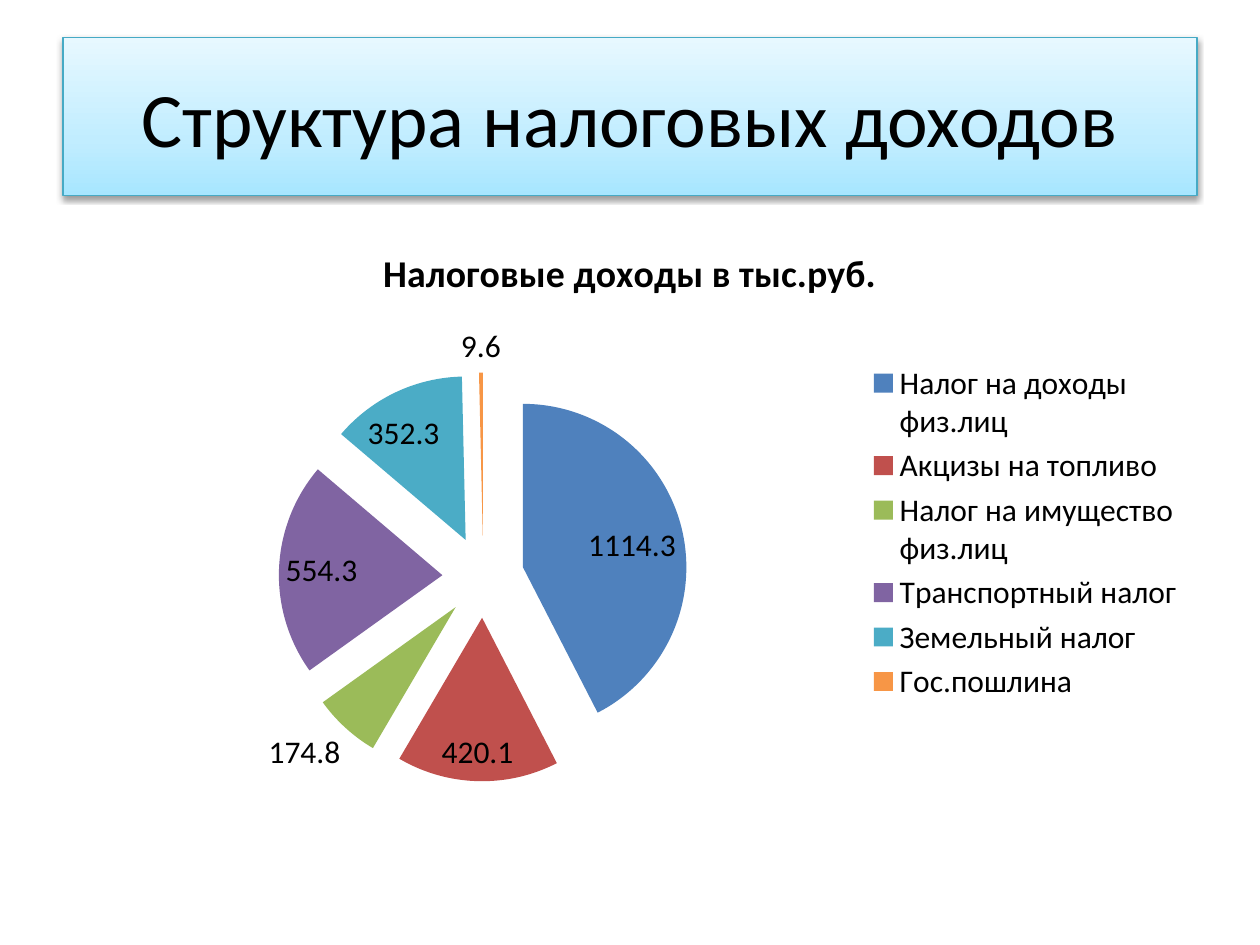
from copy import deepcopy
from typing import NamedTuple

from lxml import etree
from pptx import Presentation
from pptx.chart.data import CategoryChartData
from pptx.dml.color import RGBColor
from pptx.enum import chart as kinds, text
from pptx.oxml import parse_xml
from pptx.oxml.ns import nsdecls, qn
from pptx import util as u

BLACK = RGBColor(0x00, 0x00, 0x00)
EDGE = RGBColor(0x46, 0xAA, 0xC5)
STOPS = [
    (0, RGBColor(0xA7, 0xE6, 0xFF)),
    (0.35, RGBColor(0xC1, 0xED, 0xFF)),
    (1, RGBColor(0xE7, 0xF8, 0xFF)),
]
FACE = "Calibri"
WIDE, HIGH = u.Inches(10), u.Inches(7.5)


class Box(NamedTuple):
    """Place and size as shares of the slide."""
    left: float
    top: float
    width: float
    height: float

    def emu(self) -> list[int]:
        return [int(share * side) for share, side in zip(self, (WIDE, HIGH) * 2)]


class Tax(NamedTuple):
    name: str
    sum: float
    tint: RGBColor


TITLE = Box(0.05, 0.04, 0.9, 1 / 6)
CHART = Box(0.05, 1.75 / 7.5, 0.9, 0.66)
HEAD = "Налоговые доходы в тыс.руб."
TAXES = [
    Tax("Налог на доходы физ.лиц", 1114.3, RGBColor(0x4F, 0x81, 0xBD)),
    Tax("Акцизы на топливо", 420.1, RGBColor(0xC0, 0x50, 0x4D)),
    Tax("Налог на имущество физ.лиц", 174.8, RGBColor(0x9B, 0xBB, 0x59)),
    Tax("Транспортный налог", 554.3, RGBColor(0x80, 0x64, 0xA2)),
    Tax("Земельный налог", 352.3, RGBColor(0x4B, 0xAC, 0xC6)),
    Tax("Гос.пошлина", 9.6, RGBColor(0xF7, 0x96, 0x46)),
]


def style(font, size: float, bold: bool = False) -> None:
    font.name, font.size, font.bold = FACE, u.Pt(size), bold
    font.color.rgb = BLACK


def draw_title(slide, words: str) -> None:
    shape = slide.shapes.title
    shape.left, shape.top, shape.width, shape.height = TITLE.emu()
    frame = shape.text_frame
    frame.text = words
    frame.vertical_anchor = text.MSO_ANCHOR.MIDDLE
    para = frame.paragraphs[0]
    para.alignment = text.PP_ALIGN.CENTER
    style(para.font, 44)

    # Gradient with a third stop, running upwards
    shape.fill.gradient()
    shape.fill.gradient_angle = 90
    first = shape._element.spPr.find(".//" + qn("a:gs"))
    first.addnext(deepcopy(first))
    for stop, (pos, tint) in zip(shape.fill.gradient_stops, STOPS):
        stop.position = pos
        stop.color.rgb = tint
    shape.line.color.rgb = EDGE
    shape.line.width = u.Pt(0.75)

    # Soft shadow below
    shape._element.spPr.append(parse_xml(
        f'<a:effectLst {nsdecls("a")}>'
        f'<a:outerShdw blurRad="{u.Pt(3.1)}" dist="{u.Pt(1.6)}" dir="5400000" rotWithShape="0">'
        '<a:srgbClr val="000000"><a:alpha val="38000"/></a:srgbClr>'
        '</a:outerShdw></a:effectLst>'))


def draw_pie(slide, taxes: list[Tax]) -> None:
    data = CategoryChartData()
    data.categories = [tax.name for tax in taxes]
    data.add_series(HEAD, [tax.sum for tax in taxes])
    chart = slide.shapes.add_chart(
        kinds.XL_CHART_TYPE.PIE, *CHART.emu(), data).chart
    style(chart.font, 18)

    # Heading and legend
    chart.has_title = True
    chart.chart_title.text_frame.text = HEAD
    style(chart.chart_title.text_frame.paragraphs[0].font, 21.6, True)
    chart.has_legend = True
    chart.legend.position = kinds.XL_LEGEND_POSITION.RIGHT
    chart.legend.include_in_layout = False

    # Slices, pulled apart
    plot = chart.plots[0]
    plot.vary_by_categories = True
    row = plot.series[0]
    for i, tax in enumerate(taxes):
        fill = row.points[i].format.fill
        fill.solid()
        fill.fore_color.rgb = tax.tint
    gap = etree.Element(qn("c:explosion"), val="25")
    row._element.find(qn("c:tx")).addnext(gap)

    # Values
    plot.has_data_labels = True
    plot.data_labels.show_value = True
    plot.data_labels.show_percentage = False
    plot.data_labels.position = kinds.XL_LABEL_POSITION.BEST_FIT


def main() -> None:
    deck = Presentation()
    deck.slide_width, deck.slide_height = WIDE, HIGH
    slide = deck.slides.add_slide(deck.slide_layouts[5])
    draw_title(slide, "Структура налоговых доходов")
    draw_pie(slide, TAXES)
    deck.save("out.pptx")


if __name__ == "__main__":
    main()
